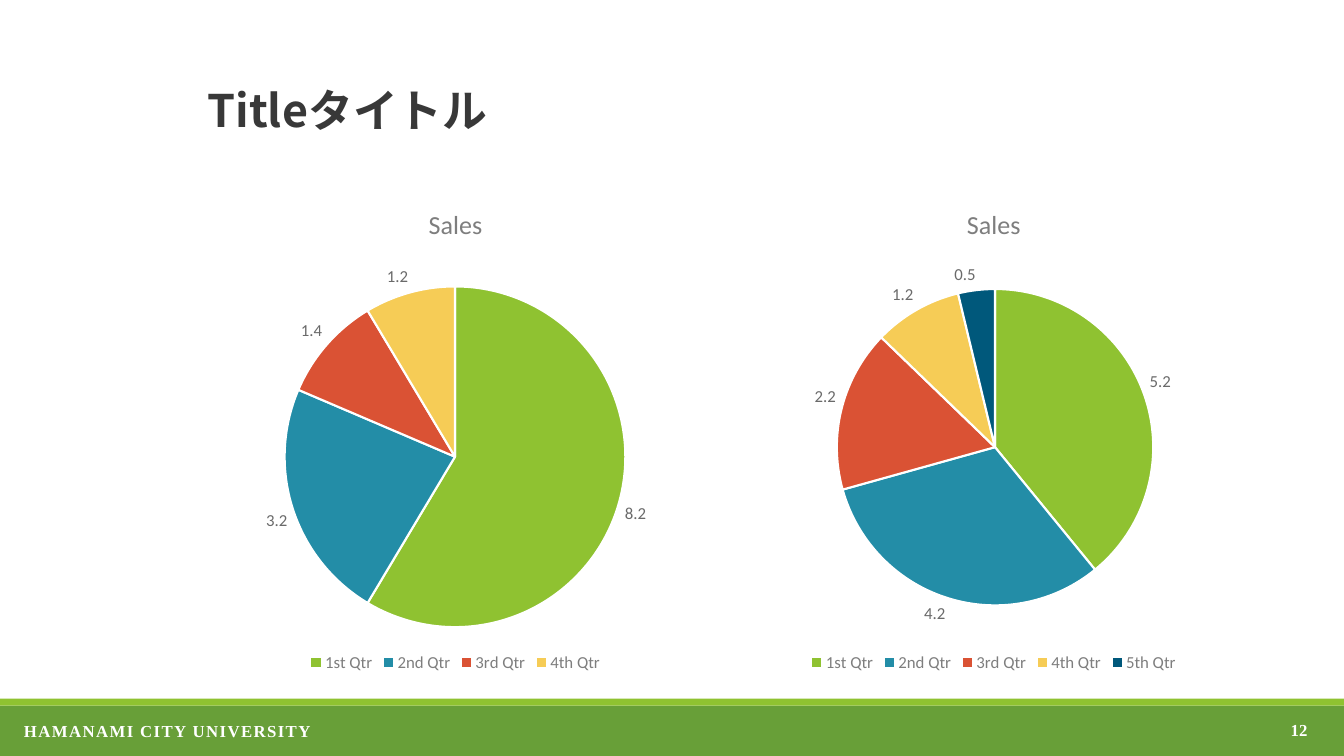
from dataclasses import dataclass

from lxml.etree import SubElement
from pptx import Presentation
from pptx.chart.data import CategoryChartData
from pptx.dml.color import RGBColor
from pptx.enum.chart import XL_CHART_TYPE, XL_LABEL_POSITION, XL_LEGEND_POSITION
from pptx.enum.shapes import MSO_SHAPE
from pptx.enum.text import MSO_ANCHOR, PP_ALIGN
from pptx.oxml.ns import qn
from pptx.slide import Slide
from pptx.text.text import Font
from pptx.util import Pt


@dataclass(frozen=True)
class Theme:
    title_font: str = "Noto Sans CJK JP"
    footer_font: str = "Times New Roman"
    chart_font: str = "Calibri"
    title_size: float = 32
    chart_title_size: float = 18.6
    small_size: float = 12
    chart_size: float = 10
    white: str = "FFFFFF"
    dark: str = "383838"
    legend_gray: str = "7E7E7E"
    label_gray: str = "6A6A6A"
    band_green: str = "689F38"
    slices: tuple[str, ...] = ("8FC231", "238DA7", "DA5234", "F6CC56", "00587B")


THEME = Theme()


@dataclass(frozen=True)
class Frame:
    left: float
    top: float
    width: float
    height: float

    def lengths(self) -> tuple[Pt, Pt, Pt, Pt]:
        return Pt(self.left), Pt(self.top), Pt(self.width), Pt(self.height)


@dataclass(frozen=True)
class Band:
    frame: Frame
    color: str


@dataclass(frozen=True)
class Label:
    text: str
    frame: Frame
    font: str
    size: float
    color: str
    anchor: MSO_ANCHOR = MSO_ANCHOR.MIDDLE
    align: PP_ALIGN = PP_ALIGN.LEFT
    line_spacing: float = 1.0
    letter_spacing: float = 0


@dataclass(frozen=True)
class Pie:
    quarters: tuple[str, ...]
    sales: tuple[float, ...]


BANDS = (
    Band(Frame(0, 504, 960, 36), THEME.band_green),
    Band(Frame(0, 499, 960, 5), THEME.slices[0]),
)
LABELS = (
    Label("HAMANAMI CITY UNIVERSITY", Frame(10, 511.2, 898.6, 21.6), THEME.footer_font,
          THEME.small_size, THEME.white, MSO_ANCHOR.TOP, letter_spacing=1),
    Label("12", Frame(725, 507, 216, 28.8), THEME.footer_font,
          THEME.small_size, THEME.white, align=PP_ALIGN.RIGHT),
    Label("Titleタイトル", Frame(141.1, 28.8, 752.4, 104.4), THEME.title_font,
          THEME.title_size, THEME.dark, line_spacing=0.9),
)
QUARTERS = ("1st Qtr", "2nd Qtr", "3rd Qtr", "4th Qtr", "5th Qtr")
PIES = (
    Pie(QUARTERS[:4], (8.2, 3.2, 1.4, 1.2)),
    Pie(QUARTERS, (5.2, 4.2, 2.2, 1.2, 0.5)),
)
PIE_LEFT, PIE_TOP, PIE_WIDTH, PIE_HEIGHT, PIE_PITCH = 141.1, 133.2, 368.6, 349.9, 384.5


def style_font(font: Font, name: str, size: float, color: str, bold: bool = False) -> None:
    font.name = name
    font.size = Pt(size)
    font.bold = bold
    font.color.rgb = RGBColor.from_string(color)


def draw_band(page: Slide, band: Band) -> None:
    shape = page.shapes.add_shape(MSO_SHAPE.RECTANGLE, *band.frame.lengths())
    shape.shadow.inherit = False
    shape.fill.solid()
    shape.fill.fore_color.rgb = RGBColor.from_string(band.color)
    shape.line.fill.background()


def draw_label(page: Slide, label: Label) -> None:
    box = page.shapes.add_textbox(*label.frame.lengths())
    box.text_frame.word_wrap = True
    box.text_frame.vertical_anchor = label.anchor
    para = box.text_frame.paragraphs[0]
    para.text = label.text
    para.alignment = label.align
    para.line_spacing = label.line_spacing
    style_font(para.font, label.font, label.size, label.color, bold=True)
    properties = para.font._element
    SubElement(properties, qn("a:ea"), typeface=label.font)
    if label.letter_spacing:
        properties.set("spc", str(round(label.letter_spacing * 100)))


def draw_pie(page: Slide, pie: Pie, frame: Frame) -> None:
    chart_data = CategoryChartData()
    chart_data.categories = pie.quarters
    chart_data.add_series("Sales", pie.sales)
    chart = page.shapes.add_chart(XL_CHART_TYPE.PIE, *frame.lengths(), chart_data).chart
    style_font(chart.font, THEME.chart_font, THEME.chart_size, THEME.dark)

    chart.has_title = True
    chart.chart_title.include_in_layout = False
    heading = chart.chart_title.text_frame.paragraphs[0]
    heading.text = "Sales"
    style_font(heading.font, THEME.chart_font, THEME.chart_title_size, THEME.legend_gray)

    chart.has_legend = True
    chart.legend.position = XL_LEGEND_POSITION.BOTTOM
    chart.legend.include_in_layout = False
    style_font(chart.legend.font, THEME.chart_font, THEME.small_size, THEME.legend_gray)

    plot = chart.plots[0]
    plot.vary_by_categories = True
    series = plot.series[0]
    labels = series.data_labels
    labels.show_value = True
    labels.position = XL_LABEL_POSITION.OUTSIDE_END
    style_font(labels.font, THEME.chart_font, THEME.small_size, THEME.label_gray)
    for index, color in enumerate(THEME.slices[:len(pie.sales)]):
        piece = series.points[index].format
        piece.fill.solid()
        piece.fill.fore_color.rgb = RGBColor.from_string(color)
        piece.line.color.rgb = RGBColor.from_string(THEME.white)
        piece.line.width = Pt(1.5)


def main() -> None:
    deck = Presentation()
    deck.slide_width, deck.slide_height = Pt(960), Pt(540)
    page = deck.slides.add_slide(deck.slide_layouts[6])
    for band in BANDS:
        draw_band(page, band)
    for column, pie in enumerate(PIES):
        left = PIE_LEFT + column * PIE_PITCH
        draw_pie(page, pie, Frame(left, PIE_TOP, PIE_WIDTH, PIE_HEIGHT))
    for label in LABELS:
        draw_label(page, label)
    deck.save("out.pptx")


if __name__ == "__main__":
    main()
